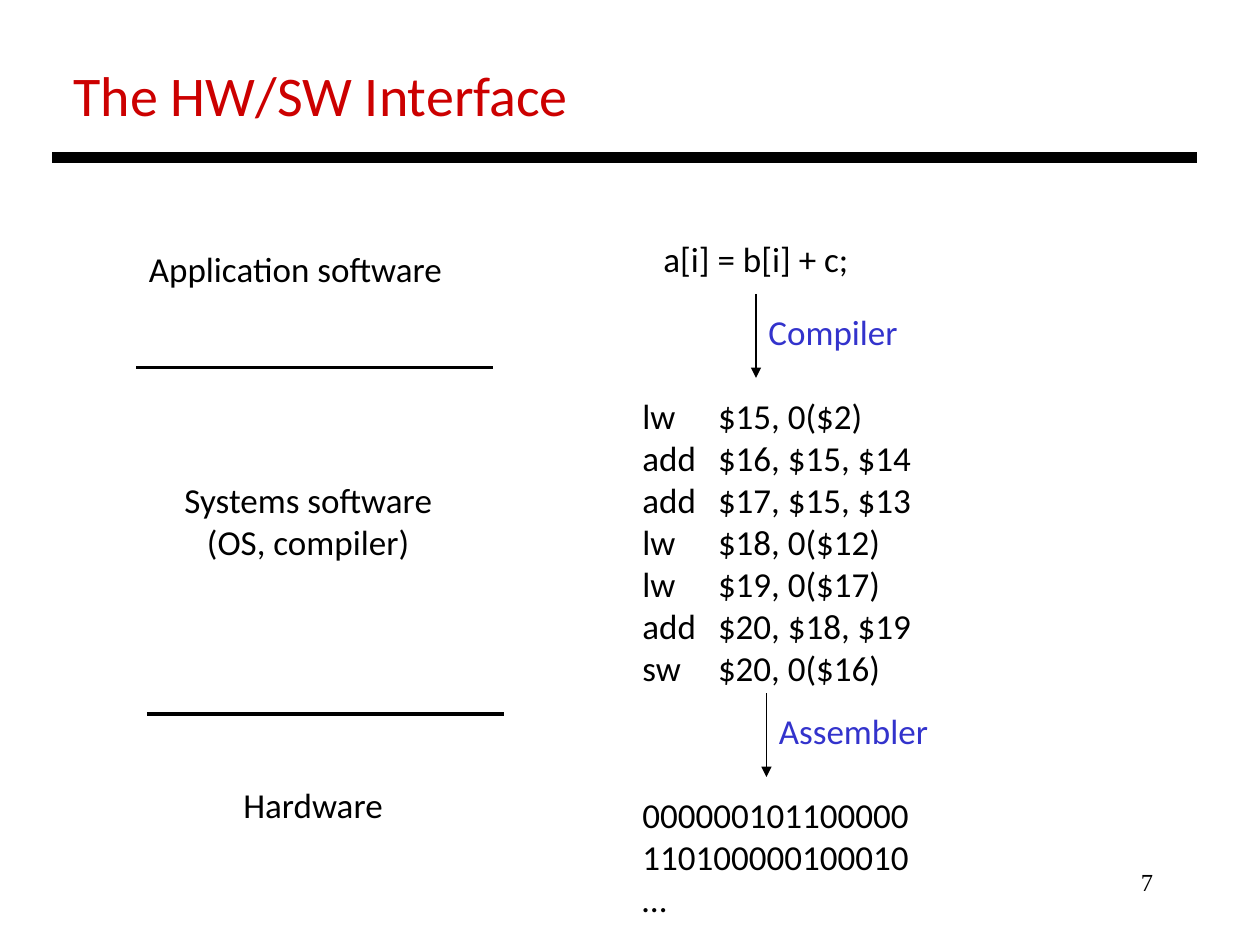
"""Build a slide on the layers between application software and hardware."""
from collections import namedtuple

from lxml import etree
from pptx import Presentation
from pptx import util as u
from pptx.dml.color import RGBColor
from pptx.enum import shapes, text
from pptx.oxml import ns

BLACK = RGBColor(0x00, 0x00, 0x00)
RED = RGBColor(0xCC, 0x00, 0x00)
BLUE = RGBColor(0x33, 0x33, 0xCC)
FONT = "Calibri"
COLUMNS, ROWS = 120, 90
CELL = u.Inches(10) // COLUMNS
LEFT, CENTER, RIGHT = text.PP_ALIGN.LEFT, text.PP_ALIGN.CENTER, text.PP_ALIGN.RIGHT

Box = namedtuple("Box", "col row width height")

ASSEMBLY = [
    "lw\t$15, 0($2)",
    "add\t$16, $15, $14",
    "add\t$17, $15, $13",
    "lw\t$18, 0($12)",
    "lw\t$19, 0($17)",
    "add\t$20, $18, $19",
    "sw\t$20, 0($16)",
]
MACHINE_CODE = ["000000101100000", "110100000100010", "…"]


def cells(count):
    """Convert a number of grid cells to a length."""
    return u.Emu(round(count * CELL))


def write(frame, lines, size=20, color=BLACK, font=FONT, align=LEFT):
    """Fill a text frame with one paragraph for each line."""
    frame.word_wrap = False
    frame.vertical_anchor = text.MSO_ANCHOR.TOP
    frame.text = "\n".join(lines)
    for paragraph in frame.paragraphs:
        paragraph.alignment = align
        paragraph.font.size = u.Pt(size)
        paragraph.font.name = font
        paragraph.font.color.rgb = color


def add_label(slide, box, col, row, width, lines, **style):
    """Place text at a cell of a box, as high as its lines need."""
    label = slide.shapes.add_textbox(
        cells(box.col + col), cells(box.row + row),
        cells(width), cells(1.3 + 4 * len(lines)))
    write(label.text_frame, lines, **style)
    return label


def add_line(slide, box, start, end, weight, arrow=False):
    """Draw a black line between two cells of a box."""
    line = slide.shapes.add_connector(
        shapes.MSO_CONNECTOR.STRAIGHT,
        cells(box.col + start[0]), cells(box.row + start[1]),
        cells(box.col + end[0]), cells(box.row + end[1]))
    line.line.color.rgb = BLACK
    line.line.width = u.Pt(weight)
    if arrow:
        etree.SubElement(line.line._get_or_add_ln(), ns.qn("a:tailEnd"), type="triangle")
    etree.SubElement(line._element.spPr, ns.qn("a:effectLst"))


def add_operand_tab(paragraph, position):
    """Set the tab stop that lines up the operands."""
    stops = etree.Element(ns.qn("a:tabLst"))
    etree.SubElement(stops, ns.qn("a:tab"), pos=str(int(position)), algn="l")
    paragraph._p.get_or_add_pPr().insert(0, stops)


def add_heading(slide, box):
    """Set the title and the thick rule under it."""
    title = slide.shapes.title
    title.left, title.top = cells(box.col + 0.8), cells(box.row)
    title.width, title.height = cells(50), cells(7.7)
    write(title.text_frame, ["The HW/SW Interface"], size=32, color=RED)
    title.text_frame.auto_size = text.MSO_AUTO_SIZE.SHAPE_TO_FIT_TEXT
    add_line(slide, box, (0, box.height), (box.width, box.height), 6)


def add_layers(slide, box):
    """Stack the three layers with a divider between each two."""
    add_label(slide, box, 0, 0, 30.7, ["Application software"])
    add_label(slide, box, 3.2, 22, 26.3,
              ["Systems software", "(OS, compiler)"], align=CENTER)
    add_label(slide, box, 9, 51, 15.8, ["Hardware"])
    for col, row in ((0, 12), (1, 45)):
        add_line(slide, box, (col, row), (col + 34, row), 2.25)


def add_translation(slide, box):
    """Show a statement on its way down to machine code."""
    add_label(slide, box, 2, 0, 20.3, ["a[i] = b[i] + c;"])
    assembly = add_label(slide, box, 0, 15, 28.4, ASSEMBLY)
    for paragraph in assembly.text_frame.paragraphs:
        add_operand_tab(paragraph, cells(7.2))
    add_label(slide, box, 0, 53, 28, MACHINE_CODE)
    for tool, col, row, width in (("Compiler", 12, 6, 14.9), ("Assembler", 13, 44, 16.8)):
        add_line(slide, box, (col, row), (col, row + 8), 0.75, arrow=True)
        add_label(slide, box, col, row + 1, width, [tool], color=BLUE)


def add_page_number(slide, box):
    """Write the page number at the right of its box."""
    number = add_label(slide, box, 0, 0, box.width, ["7"], size=14,
                       font="Times New Roman", align=RIGHT)
    number.text_frame.word_wrap = True


def main():
    """Lay the regions out on the grid and save the slide."""
    deck = Presentation()
    deck.slide_width, deck.slide_height = cells(COLUMNS), cells(ROWS)
    slide = deck.slides.add_slide(deck.slide_layouts[5])
    add_heading(slide, Box(5, 5.2, 109, 9.8))
    add_layers(slide, Box(13, 23, 35, 57))
    add_translation(slide, Box(60, 22, 30, 67))
    add_page_number(slide, Box(86, 82, 25, 6))
    deck.save("out.pptx")


if __name__ == "__main__":
    main()
